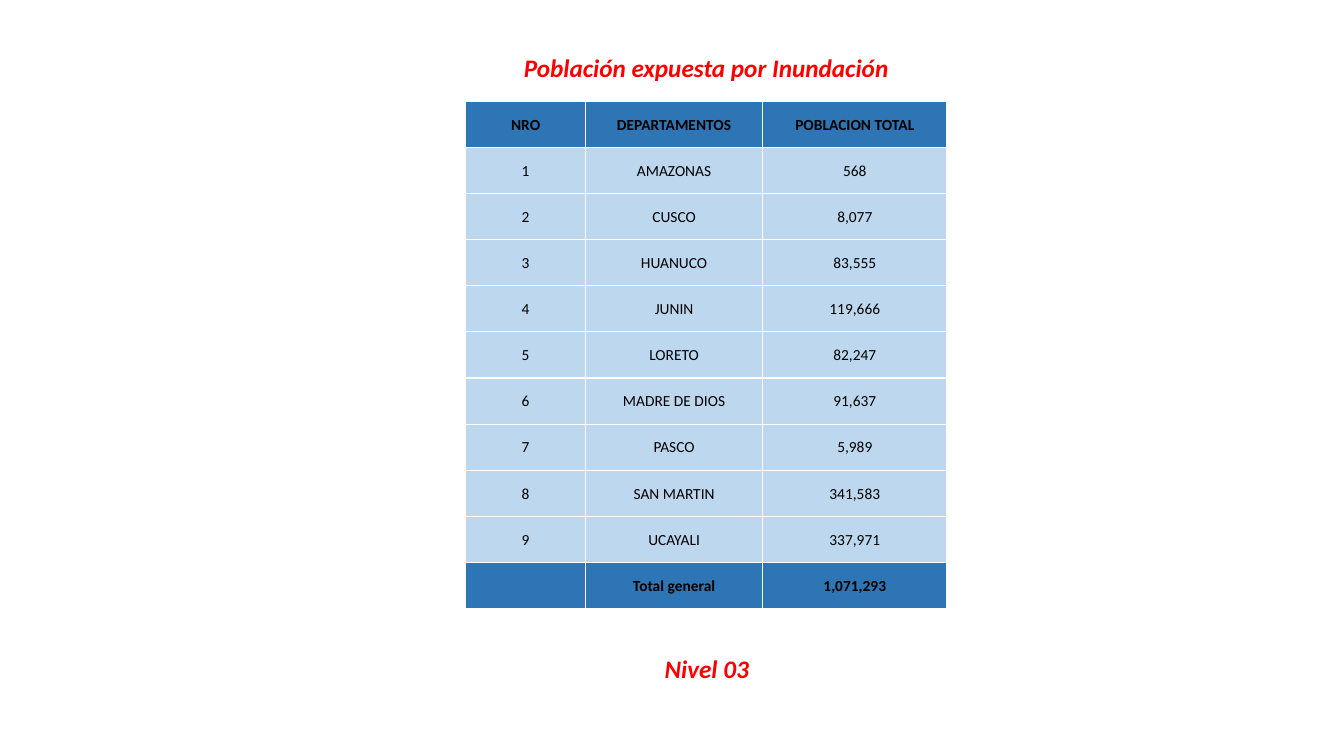
import dataclasses

import pptx
import pptx.dml.color
import pptx.enum.text
import pptx.oxml
import pptx.oxml.ns
import pptx.util


@dataclasses.dataclass(frozen=True)
class Theme:
    font: str = "Calibri"
    heading: str = "FF0000"
    text: str = "000000"
    band: str = "2E75B6"
    body: str = "BDD7EE"
    border: str = "FFFFFF"
    heading_pt: int = 18
    cell_pt: int = 11
    border_pt: int = 1


class SlideBuilder:
    """Places elements on a grid of 100 columns by 100 rows."""

    def __init__(self, prs, theme):
        self.prs, self.theme = prs, theme
        self.s = prs.slides.add_slide(prs.slide_layouts[5])  # Title Only

    def x(self, columns):
        return round(self.prs.slide_width * columns / 100)

    def y(self, rows):
        return round(self.prs.slide_height * rows / 100)

    def box(self, left, top, width, height):
        return self.x(left), self.y(top), self.x(width), self.y(height)

    def add_text(self, tf, text, size, color, bold=False, italic=False):
        p = tf.paragraphs[0]
        p.alignment = pptx.enum.text.PP_ALIGN.CENTER
        r = p.add_run()
        r.text = text
        r.font.name, r.font.size = self.theme.font, pptx.util.Pt(size)
        r.font.bold, r.font.italic = bold, italic
        r.font.color.rgb = pptx.dml.color.RGBColor.from_string(color)

    def heading(self, sp, text, wrap):
        tf = sp.text_frame
        tf.word_wrap = wrap
        tf.auto_size = pptx.enum.text.MSO_AUTO_SIZE.SHAPE_TO_FIT_TEXT
        self.add_text(tf, text, self.theme.heading_pt, self.theme.heading, True, True)

    def title(self, text, *area):
        sp = self.s.shapes.title
        sp.left, sp.top, sp.width, sp.height = self.box(*area)
        self.heading(sp, text, wrap=False)

    def caption(self, text, *area):
        self.heading(self.s.shapes.add_textbox(*self.box(*area)), text, wrap=True)

    def cell(self, cell, text, strong):
        t = self.theme
        cell.margin_left = cell.margin_right = cell.margin_top = pptx.util.Inches(0.01)
        cell.margin_bottom = 0
        cell.vertical_anchor = pptx.enum.text.MSO_ANCHOR.MIDDLE
        if text:
            self.add_text(cell.text_frame, text, t.cell_pt, t.text, strong)
        # Borders come before the fill in the cell properties
        tc_pr = cell._tc.get_or_add_tcPr()
        for side in ("lnL", "lnR", "lnT", "lnB"):
            tc_pr.append(pptx.oxml.parse_xml(
                f'<a:{side} {pptx.oxml.ns.nsdecls("a")} w="{pptx.util.Pt(t.border_pt)}">'
                f'<a:solidFill><a:srgbClr val="{t.border}"/></a:solidFill></a:{side}>'))
        cell.fill.solid()
        cell.fill.fore_color.rgb = pptx.dml.color.RGBColor.from_string(
            t.band if strong else t.body)

    def table(self, rows, left, top, widths, row_height):
        area = self.box(left, top, sum(widths), row_height * len(rows))
        table = self.s.shapes.add_table(len(rows), len(widths), *area).table
        for column, width in zip(table.columns, widths):
            column.width = self.x(width)
        for i, values in enumerate(rows):
            table.rows[i].height = self.y(row_height)
            for j, value in enumerate(values):
                self.cell(table.cell(i, j), value, strong=i in (0, len(rows) - 1))


DEPARTMENTS = [
    ("AMAZONAS", 568),
    ("CUSCO", 8077),
    ("HUANUCO", 83555),
    ("JUNIN", 119666),
    ("LORETO", 82247),
    ("MADRE DE DIOS", 91637),
    ("PASCO", 5989),
    ("SAN MARTIN", 341583),
    ("UCAYALI", 337971),
]


def main():
    prs = pptx.Presentation()
    prs.slide_width, prs.slide_height = pptx.util.Inches(13.33), pptx.util.Inches(7.5)
    slide = SlideBuilder(prs, Theme())

    # Title
    slide.title("Población expuesta por Inundación", 38.11, 6.27, 28.88, 5.33)

    # Exposed population by department, with its total
    total = sum(people for _, people in DEPARTMENTS)
    rows = [("NRO", "DEPARTAMENTOS", "POBLACION TOTAL")]
    rows += [(str(n), name, f"{people:,}")
             for n, (name, people) in enumerate(DEPARTMENTS, 1)]
    rows.append(("", "Total general", f"{total:,}"))
    slide.table(rows, left=34.66, top=13.4, widths=(8.9, 13.2, 13.7), row_height=6.1)

    # Level caption
    slide.caption("Nivel 03", 48.46, 85.73, 8.25, 5.33)

    prs.save("out.pptx")


if __name__ == "__main__":
    main()
